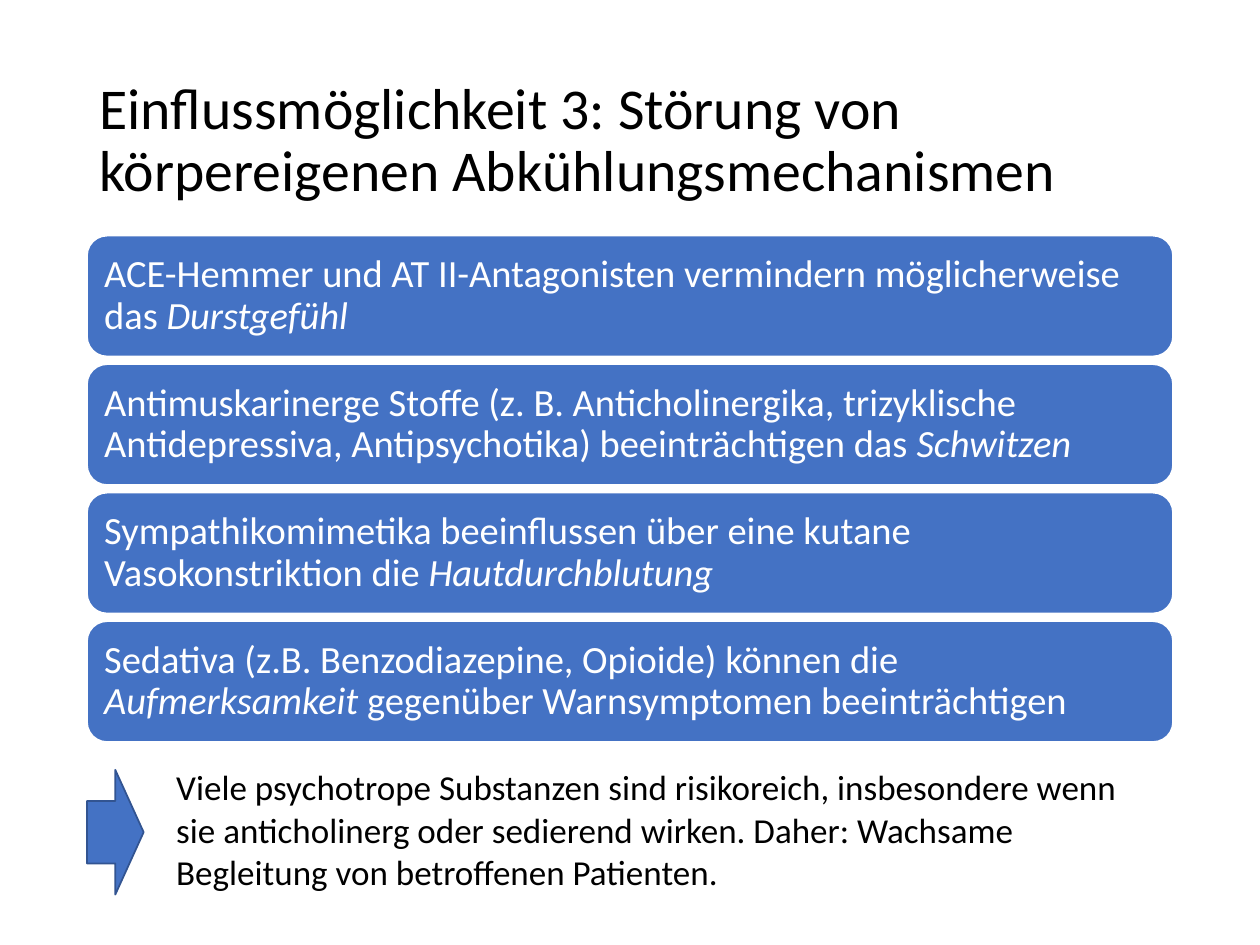
from pptx import Presentation
from pptx.dml.color import RGBColor
from pptx.enum.shapes import MSO_SHAPE
from pptx.enum.text import MSO_ANCHOR, PP_ALIGN
from pptx.util import Inches, Pt

ROUNDED, ARROW = MSO_SHAPE.ROUNDED_RECTANGLE, MSO_SHAPE.RIGHT_ARROW
TOP, MIDDLE = MSO_ANCHOR.TOP, MSO_ANCHOR.MIDDLE
LEFT = PP_ALIGN.LEFT

# Content: each run is (text, italic)
TITLE = [("Einflussmöglichkeit 3: Störung von körpereigenen Abkühlungsmechanismen", False)]
MECHANISMS = [
    [("ACE-Hemmer und AT II-Antagonisten vermindern möglicherweise das ", False),
     ("Durstgefühl", True)],
    [("Antimuskarinerge Stoffe (z. B. Anticholinergika, trizyklische Antidepressiva, "
      "Antipsychotika) beeinträchtigen das ", False),
     ("Schwitzen", True)],
    [("Sympathikomimetika beeinflussen über eine kutane Vasokonstriktion die ", False),
     ("Hautdurchblutung", True)],
    [("Sedativa (z.B. Benzodiazepine, Opioide) können die ", False),
     ("Aufmerksamkeit ", True),
     ("gegenüber Warnsymptomen beeinträchtigen", False)],
]
CONCLUSION = [("Viele psychotrope Substanzen sind risikoreich, insbesondere wenn sie "
               "anticholinerg oder sedierend wirken. Daher: Wachsame Begleitung von "
               "betroffenen Patienten.", False)]

# Layout in inches
MARGIN, WIDTH = 0.69, 8.62
BAR_TOP, BAR_HEIGHT, BAR_PITCH = 1.87, 0.96, 1.02
BLUE, DARK_BLUE, WHITE, BLACK = "4472C4", "325491", "FFFFFF", "000000"


def rgb(value):
    return RGBColor.from_string(value)


def write(shape, runs, size, color=BLACK, anchor=TOP, spacing=1.0, inset=(0.1, 0.05)):
    frame = shape.text_frame
    frame.word_wrap = True
    frame.vertical_anchor = anchor
    frame.margin_left = frame.margin_right = Inches(inset[0])
    frame.margin_top = frame.margin_bottom = Inches(inset[1])
    paragraph = frame.paragraphs[0]
    paragraph.alignment = LEFT
    paragraph.line_spacing = spacing
    for text, italic in runs:
        run = paragraph.add_run()
        run.text = text
        run.font.name = "Calibri"
        run.font.size = Pt(size)
        run.font.italic = italic
        run.font.color.rgb = rgb(color)


def add_block(slide, kind, left, top, width, height, line):
    block = slide.shapes.add_shape(kind, Inches(left), Inches(top), Inches(width), Inches(height))
    block.shadow.inherit = False
    block.fill.solid()
    block.fill.fore_color.rgb = rgb(BLUE)
    block.line.color.rgb = rgb(line)
    block.line.width = Pt(1)
    return block


def main():
    prs = Presentation()
    prs.slide_width, prs.slide_height = Inches(10), Inches(7.5)
    slide = prs.slides.add_slide(prs.slide_layouts[5])

    # Title
    title = slide.shapes.title
    title.left, title.top = Inches(MARGIN), Inches(0.4)
    title.width, title.height = Inches(WIDTH), Inches(1.45)
    write(title, TITLE, 33, anchor=MIDDLE, spacing=0.9)

    # Mechanism bars
    for row, mechanism in enumerate(MECHANISMS):
        bar = add_block(slide, ROUNDED, MARGIN, BAR_TOP + row * BAR_PITCH,
                        WIDTH, BAR_HEIGHT, WHITE)
        write(bar, mechanism, 22, color=WHITE, anchor=MIDDLE, spacing=0.9, inset=(0.09, 0.09))

    # Conclusion with its arrow
    conclusion = slide.shapes.add_textbox(Inches(1.3), Inches(6.03), Inches(7.95), Inches(1.11))
    write(conclusion, CONCLUSION, 20)
    add_block(slide, ARROW, MARGIN, 6.11, 0.45, 0.99, DARK_BLUE)

    prs.save("out.pptx")


if __name__ == "__main__":
    main()
